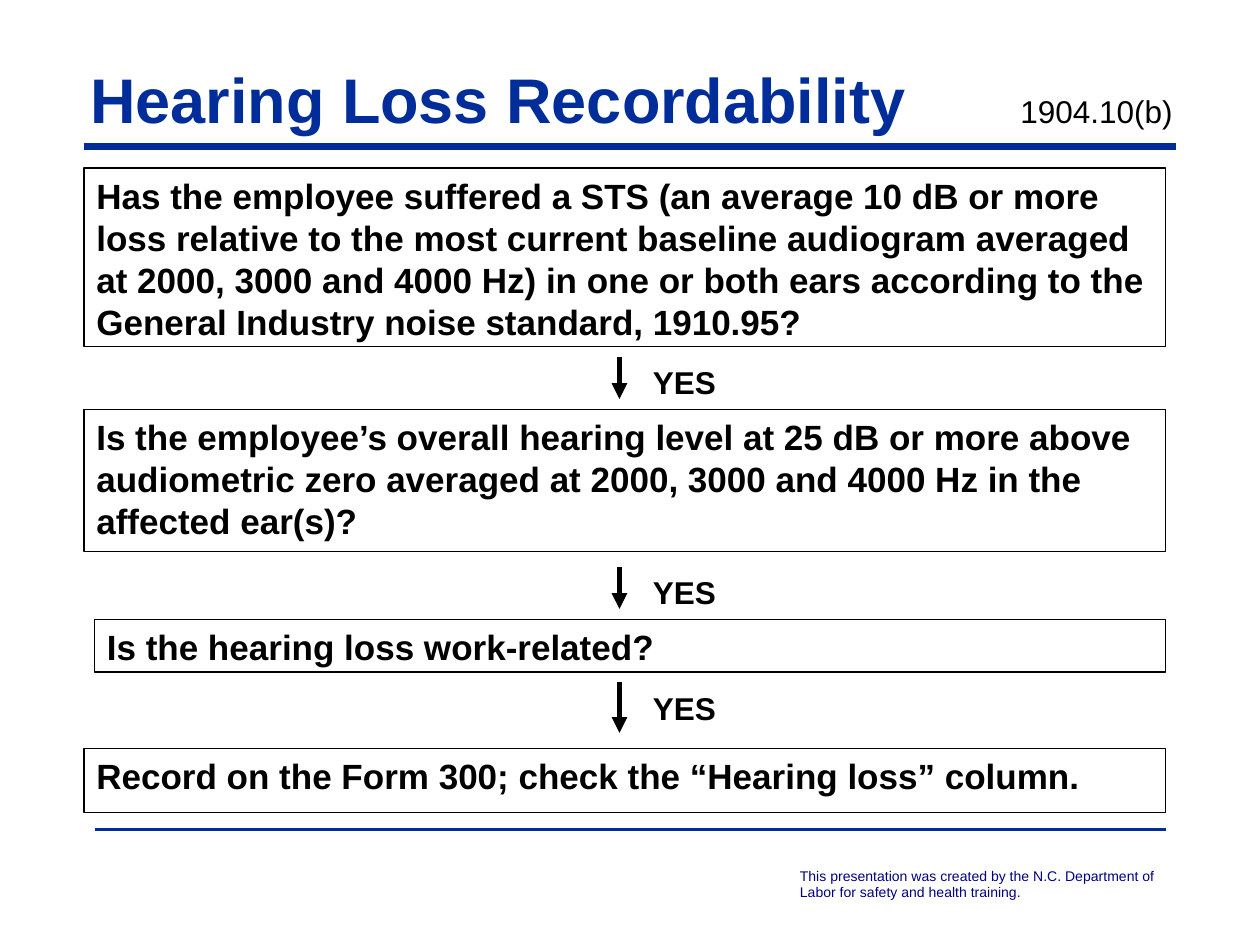
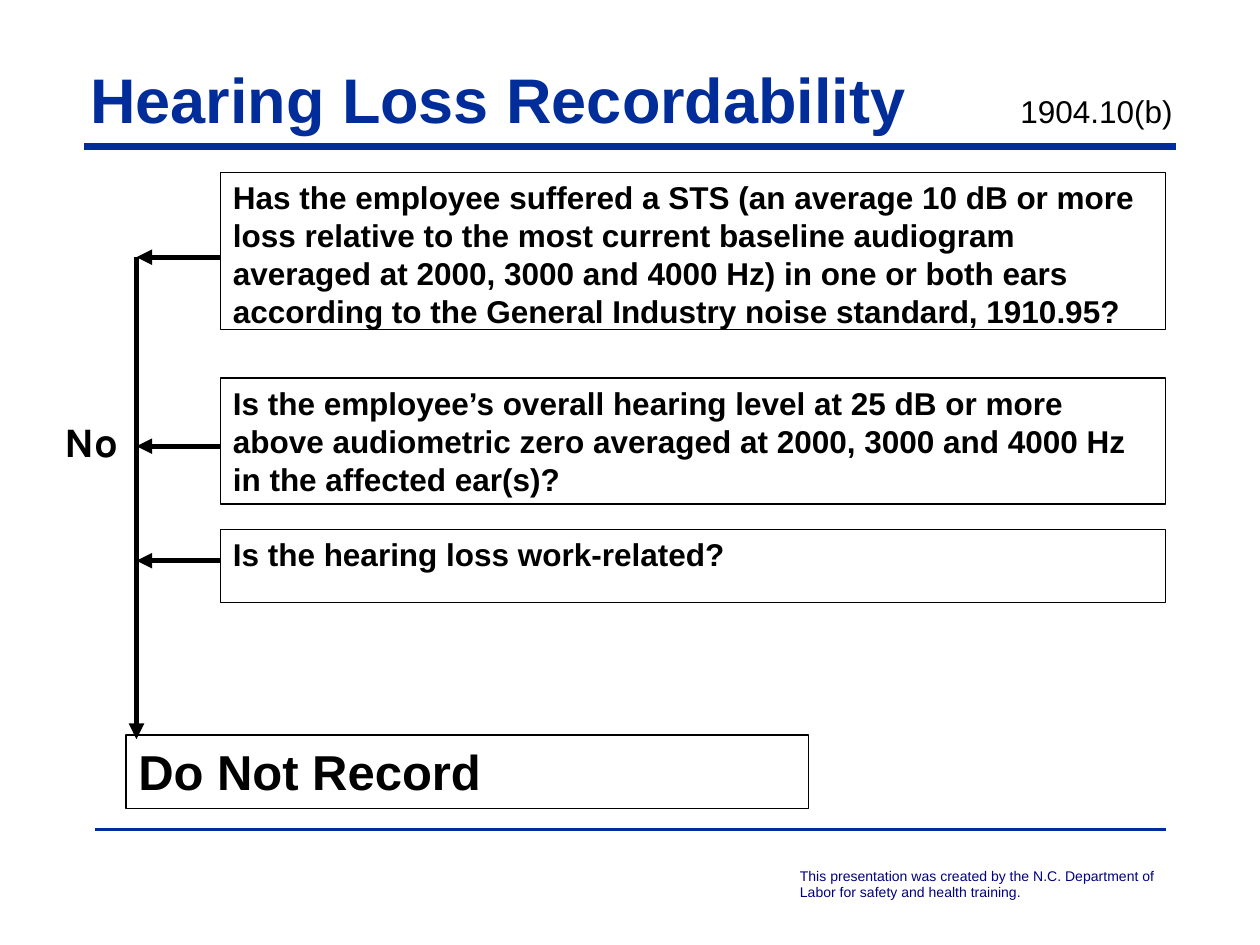
import pptx
import pptx.util
import pptx.dml.color
import pptx.enum.shapes
import pptx.enum.text
import pptx.oxml.ns
from lxml import etree

BLUE = pptx.dml.color.RGBColor(0x01, 0x2D, 0x9A)
NAVY = pptx.dml.color.RGBColor(0x00, 0x00, 0x80)
BLACK = pptx.dml.color.RGBColor(0, 0, 0)
WHITE = pptx.dml.color.RGBColor(0xFF, 0xFF, 0xFF)

STS = ("Has the employee suffered a STS (an average 10 dB or more loss relative to the most "
       "current baseline audiogram averaged at 2000, 3000 and 4000 Hz) in one or both ears "
       "according to the General Industry noise standard, 1910.95?")
LEVEL = ("Is the employee’s overall hearing level at 25 dB or more above audiometric zero "
         "averaged at 2000, 3000 and 4000 Hz in the affected ear(s)?")
WORK = "Is the hearing loss work-related?"
FOOTER = ("This presentation was created by the N.C. Department of Labor "
          "for safety and health training.")

prs = pptx.Presentation()
prs.slide_width = pptx.util.Inches(10)
prs.slide_height = pptx.util.Inches(7.5)
UNIT = prs.slide_width / 120


def add_line(s, ends, color, width, arrow=False):
    line = s.shapes.add_connector(
        pptx.enum.shapes.MSO_CONNECTOR.STRAIGHT, *[round(v * UNIT) for v in ends])
    line.line.color.rgb = color
    line.line.width = pptx.util.Pt(width)
    if arrow:
        etree.SubElement(line.line._get_or_add_ln(), pptx.oxml.ns.qn("a:tailEnd"), type="triangle")
    etree.SubElement(line._element.spPr, pptx.oxml.ns.qn("a:effectLst"))


def add_text(s, area, text, size, bold=True, color=BLACK, font="Arial", boxed=False, wrap=True):
    area = [round(v * UNIT) for v in area]
    if boxed:
        sp = s.shapes.add_shape(pptx.enum.shapes.MSO_SHAPE.RECTANGLE, *area)
        sp.shadow.inherit = False
        sp.fill.solid()
        sp.fill.fore_color.rgb = WHITE
        sp.line.color.rgb = BLACK
        sp.line.width = pptx.util.Pt(0.75)
    else:
        sp = s.shapes.add_textbox(*area)
    tf = sp.text_frame
    tf.word_wrap = wrap
    tf.vertical_anchor = pptx.enum.text.MSO_ANCHOR.TOP
    tf.text = text
    p = tf.paragraphs[0]
    p.alignment = pptx.enum.text.PP_ALIGN.LEFT
    p.font.name = font
    p.font.size = pptx.util.Pt(size)
    p.font.bold = bold
    p.font.color.rgb = color


slides = []
for title_width in (82, 92):
    s = prs.slides.add_slide(prs.slide_layouts[5])
    slides.append(s)
    add_line(s, (8, 14, 112, 14), BLUE, 4)
    add_line(s, (9, 79, 111, 79), BLUE, 2)
    add_text(s, (75, 82, 39, 4.5), FOOTER, 8, bold=False, color=NAVY)
    add_text(s, (96, 8.15, 17, 4.8), "1904.10(b)", 18, bold=False, wrap=False)

    sp = s.shapes.title
    sp.left, sp.top, sp.width, sp.height = [
        round(v * UNIT) for v in (8, 5.75, title_width, 7.2)]
    tf = sp.text_frame
    tf.text = "Hearing Loss Recordability"
    tf.auto_size = pptx.enum.text.MSO_AUTO_SIZE.NONE
    tf.vertical_anchor = pptx.enum.text.MSO_ANCHOR.TOP
    tf.margin_left = tf.margin_right = pptx.util.Inches(0.05)
    tf.margin_top = tf.margin_bottom = 0
    p = tf.paragraphs[0]
    p.alignment = pptx.enum.text.PP_ALIGN.LEFT
    p.font.name = "Arial"
    p.font.size = pptx.util.Pt(36)
    p.font.bold = True
    p.font.color.rgb = BLUE

yes_slide, no_slide = slides
RIGHT = 111

for left, top, height, text in (
        (8, 16, 17, STS),
        (8, 39, 13.5, LEVEL),
        (9, 59, 5, WORK),
        (8, 71.3, 6.1, "Record on the Form 300; check the “Hearing loss” column.")):
    add_text(yes_slide, (left, top, RIGHT - left, height), text, 20, boxed=True)

for top, bottom in ((34, 38), (54, 58), (65, 69.8)):
    add_line(yes_slide, (59, top, 59, bottom), BLACK, 3, arrow=True)
    add_text(yes_slide, (61, top, 8.4, 4.8), "YES", 18, wrap=False)

TRUNK = 13
for top, height, arrow_row, text in (
        (16.4, 15, 24.5, STS),
        (36, 12, 42.5, LEVEL),
        (50.4, 7, 53.4, WORK)):
    add_line(no_slide, (27, arrow_row, TRUNK, arrow_row), BLACK, 3, arrow=True)
    add_text(no_slide, (21, top, RIGHT - 21, height), text, 18, boxed=True)

add_text(no_slide, (12, 70, 65, 7), "Do Not Record", 28, boxed=True)
add_line(no_slide, (TRUNK, 24.5, TRUNK, 70.4), BLACK, 3, arrow=True)
add_text(no_slide, (5, 39, 11, 6), "No", 24, font="Karla")

prs.save("out.pptx")
